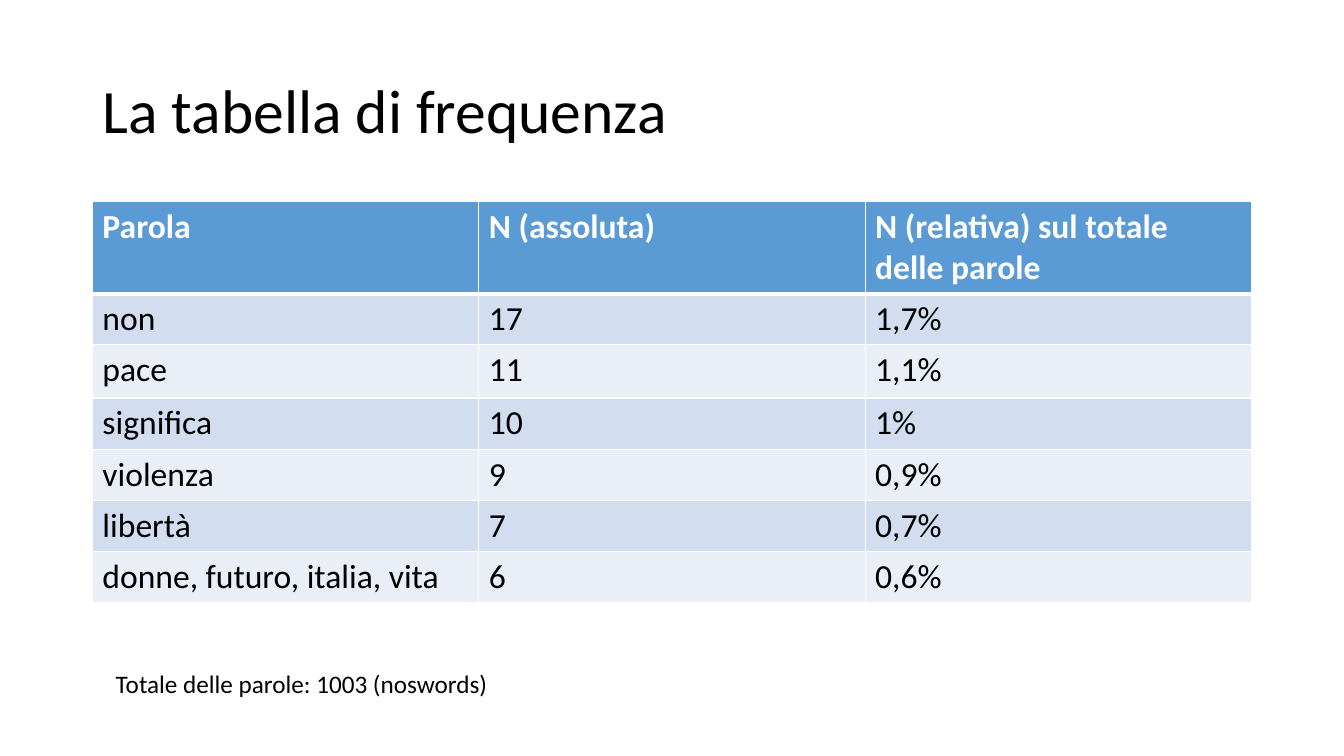
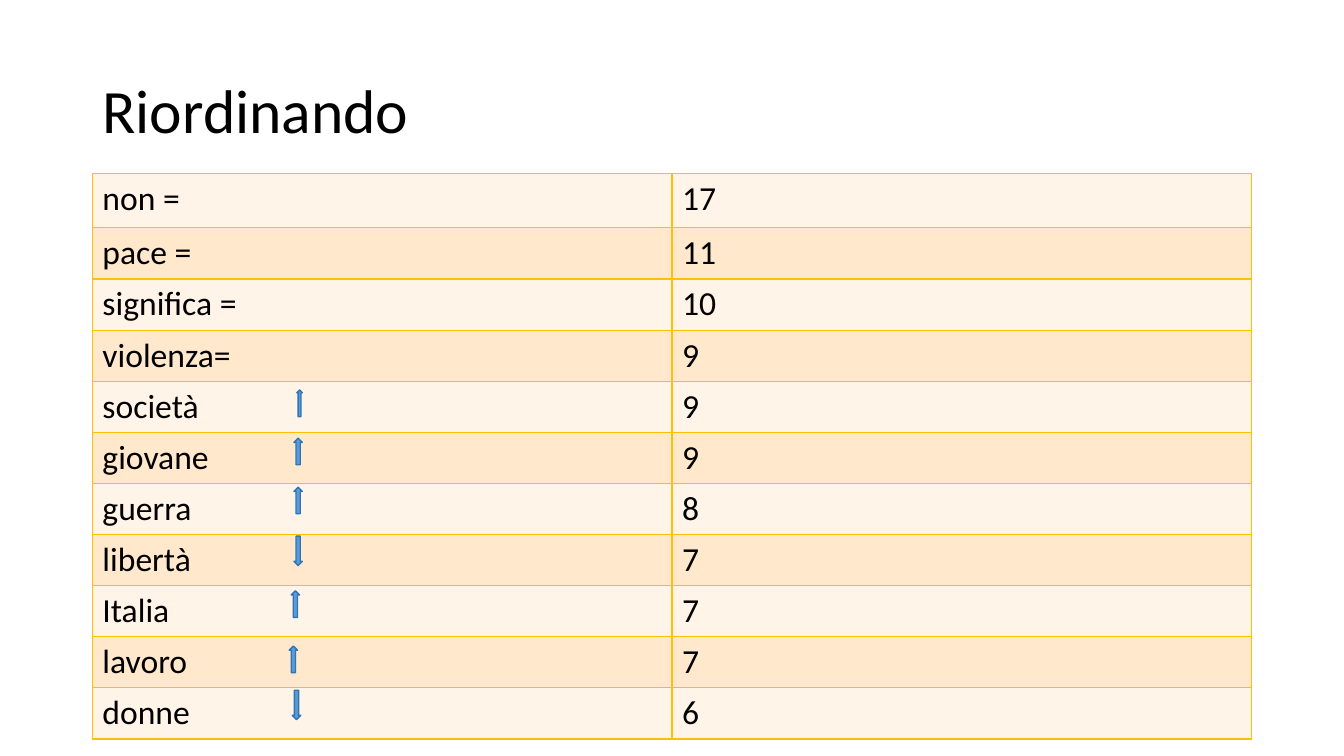
from lxml import etree
from pptx import Presentation
from pptx.dml.color import RGBColor
from pptx.enum import shapes, text
from pptx.oxml import ns
from pptx.util import Pt

FONT = "Calibri"
BLACK, WHITE, BLUE, NAVY, GOLD = "000000", "FFFFFF", "5B9BD5", "2E75B6", "FFC000"
LEFT, WIDTH = 66, 828
TITLE = (LEFT, 29, WIDTH, 104)
ROW = 36.5

COUNTS = {
    "title": "La tabella di frequenza",
    "top": 144,
    "head": True,
    "bands": ("D2DEEF", "EAEFF7"),
    "edge": WHITE,
    "tall": {0: 65, 2: 38},
    "rows": [
        ("Parola", "N (assoluta)", "N (relativa) sul totale delle parole"),
        ("non", "17", "1,7%"),
        ("pace", "11", "1,1%"),
        ("significa", "10", "1%"),
        ("violenza", "9", "0,9%"),
        ("libertà", "7", "0,7%"),
        ("donne, futuro, italia, vita", "6", "0,6%"),
    ],
}
NOTE = "Totale delle parole: 1003 (noswords)"
NOTE_BOX = (75.6, 474, 310, 29)

RANKS = {
    "title": "Riordinando",
    "top": 123.8,
    "head": False,
    "bands": ("FFE8CC", "FFF4E7"),
    "edge": GOLD,
    "tall": {0: 39},
    "rows": [
        ("non =", "17"),
        ("pace =", "11"),
        ("significa =", "10"),
        ("violenza=", "9"),
        ("società", "9"),
        ("giovane", "9"),
        ("guerra", "8"),
        ("libertà", "7"),
        ("Italia", "7"),
        ("lavoro", "7"),
        ("donne", "6"),
    ],
}
# Direction, left, top, width
ARROWS = [
    ("up", 212, 278.6, 4),
    ("up", 210, 313, 6),
    ("up", 210, 348, 6),
    ("down", 210, 383, 6),
    ("up", 208, 422, 6),
    ("up", 206.6, 461.5, 6),
    ("down", 208.8, 493, 6),
]
KINDS = {
    "up": (shapes.MSO_SHAPE.UP_ARROW, 19),
    "down": (shapes.MSO_SHAPE.DOWN_ARROW, 21),
}


def rgb(code):
    return RGBColor.from_string(code)


def paint(item, code):
    item.fill.solid()
    item.fill.fore_color.rgb = rgb(code)


def write(frame, words, size, color=BLACK, bold=False):
    frame.text = words
    para = frame.paragraphs[0]
    para.alignment = text.PP_ALIGN.LEFT
    for name, value in {"name": FONT, "size": Pt(size), "bold": bold}.items():
        setattr(para.font, name, value)
    para.font.color.rgb = rgb(color)
    return para


def rule(cell, color, widths):
    """Draw the cell's borders; widths run left, right, top, bottom."""
    props = cell._tc.get_or_add_tcPr()
    for side, width in zip("LRTB", widths):
        line = etree.SubElement(props, ns.qn(f"a:ln{side}"), w=str(int(Pt(width))))
        fill = etree.SubElement(line, ns.qn("a:solidFill"))
        etree.SubElement(fill, ns.qn("a:srgbClr"), val=color)


def add_page(deck, data):
    """Add a slide with its title and its table."""
    page = deck.slides.add_slide(deck.slide_layouts[5])
    title = page.shapes.title
    for name, value in zip(("left", "top", "width", "height"), TITLE):
        setattr(title, name, Pt(value))
    frame = title.text_frame
    frame.vertical_anchor = text.MSO_ANCHOR.MIDDLE
    frame.auto_size = text.MSO_AUTO_SIZE.NONE
    write(frame, data["title"], 44).line_spacing = 0.9

    rows, head = data["rows"], data["head"]
    tall = [data["tall"].get(i, ROW) for i in range(len(rows))]
    box = map(Pt, (LEFT, data["top"], WIDTH, sum(tall)))
    table = page.shapes.add_table(len(rows), len(rows[0]), *box).table
    table.first_row = head
    table.horz_banding = False
    for i, row in enumerate(rows):
        table.rows[i].height = Pt(tall[i])
        top = head and i == 0
        widths = (1, 1, 3 if head and i == 1 else 1, 3 if top else 1)
        for j, words in enumerate(row):
            cell = table.cell(i, j)
            write(cell.text_frame, words, 24, WHITE if top else BLACK, top)
            rule(cell, data["edge"], widths)
            paint(cell, BLUE if top else data["bands"][(i + 1) % 2])
    return page


def add_note(page):
    frame = page.shapes.add_textbox(*map(Pt, NOTE_BOX)).text_frame
    frame.word_wrap = True
    write(frame, NOTE, 18)


def add_arrows(page):
    for way, left, top, width in ARROWS:
        kind, height = KINDS[way]
        arrow = page.shapes.add_shape(kind, *map(Pt, (left, top, width, height)))
        arrow.shadow.inherit = False
        paint(arrow, BLUE)
        arrow.line.color.rgb = rgb(NAVY)
        arrow.line.width = Pt(1)


def main():
    deck = Presentation()
    deck.slide_width, deck.slide_height = Pt(960), Pt(540)
    add_note(add_page(deck, COUNTS))
    add_arrows(add_page(deck, RANKS))
    deck.save("out.pptx")


if __name__ == "__main__":
    main()
